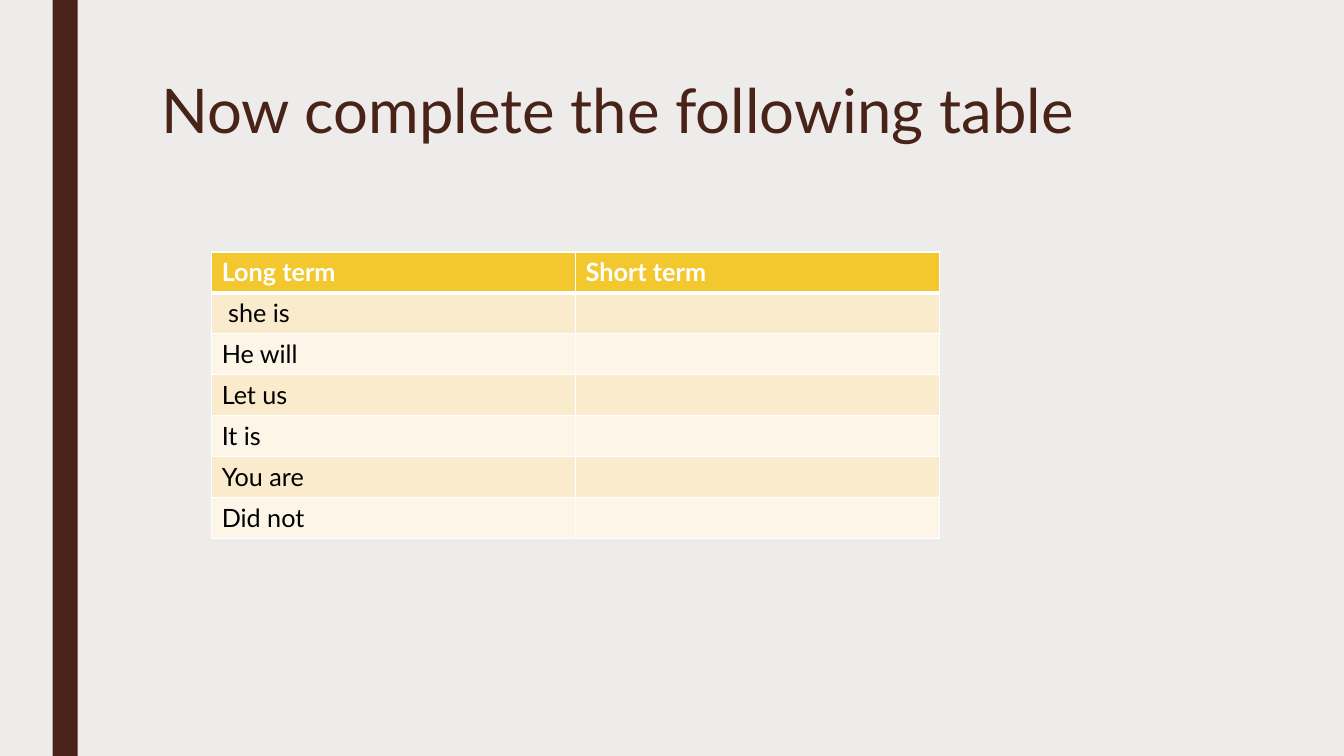
import pptx
import pptx.dml.color
import pptx.enum.shapes
import pptx.enum.text
import pptx.oxml
import pptx.oxml.ns
import pptx.util

Pt = pptx.util.Pt
BROWN = "4A2318"
WHITE = "FFFFFF"


def paint(color_format, color):
    color_format.rgb = pptx.dml.color.RGBColor.from_string(color)


def add_border(cell, side, width):
    cell._tc.get_or_add_tcPr().append(pptx.oxml.parse_xml(
        f'<a:{side} {pptx.oxml.ns.nsdecls("a")} w="{Pt(width)}">'
        f'<a:solidFill><a:srgbClr val="{WHITE}"/></a:solidFill></a:{side}>'))


deck = pptx.Presentation()
deck.slide_width, deck.slide_height = Pt(960), Pt(540)
page = deck.slides.add_slide(deck.slide_layouts[6])
page.background.fill.solid()
paint(page.background.fill.fore_color, "EDECEB")

# Side bar
bar = page.shapes.add_shape(pptx.enum.shapes.MSO_SHAPE.RECTANGLE,
                            Pt(37.5), Pt(0), Pt(18), Pt(540))
bar.shadow.inherit = False
bar.fill.solid()
paint(bar.fill.fore_color, BROWN)
bar.line.fill.background()

# Title
title = page.shapes.add_textbox(Pt(108), Pt(54), Pt(756), Pt(116.64))
title.text_frame.word_wrap = True
title.text_frame.vertical_anchor = pptx.enum.text.MSO_ANCHOR.TOP
title.text_frame.text = "Now complete the following table"
para = title.text_frame.paragraphs[0]
para.line_spacing = 0.89
span = para.runs[0]
span.font.size = Pt(44)
span.font.name = "Lato"
paint(span.font.color, BROWN)

# Table of long and short forms
rows = [
    ("Long term", "Short term"),
    (" she is", ""),
    ("He will", ""),
    ("Let us", ""),
    ("It is", ""),
    ("You are", ""),
    ("Did not", ""),
]
table = page.shapes.add_table(len(rows), 2, Pt(151.2), Pt(180),
                              Pt(520), Pt(204.4)).table
for column in table.columns:
    column.width = Pt(260)
for row_index, texts in enumerate(rows):
    table.rows[row_index].height = Pt(29.2)
    header = row_index == 0
    fill = "F3C82E" if header else ("FDF5E8", "FAEBCD")[row_index % 2]
    for column_index, text in enumerate(texts):
        cell = table.cell(row_index, column_index)
        for side in ("lnL", "lnR", "lnT", "lnB"):
            thick = (header and side == "lnB") or (row_index == 1 and side == "lnT")
            add_border(cell, side, 3 if thick else 1)
        cell.fill.solid()
        paint(cell.fill.fore_color, fill)
        cell.text_frame.text = text
        for span in cell.text_frame.paragraphs[0].runs:
            span.font.size = Pt(18)
            span.font.name = "Lato"
            span.font.bold = header
            paint(span.font.color, WHITE if header else "000000")

deck.save("out.pptx")
